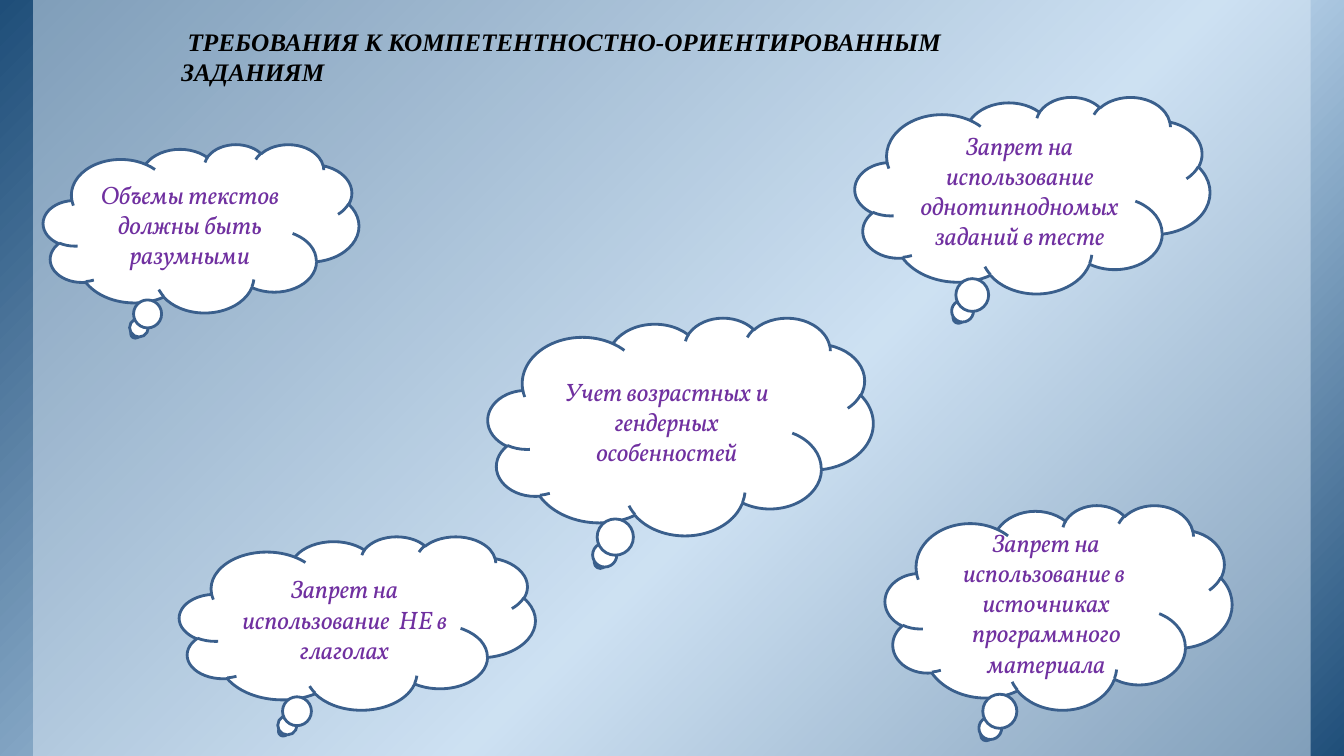
from lxml.etree import SubElement
from pptx import Presentation
from pptx.dml.color import RGBColor
from pptx.enum.shapes import MSO_SHAPE
from pptx.enum.text import MSO_ANCHOR, PP_ALIGN
from pptx.oxml.ns import qn
from pptx.util import Inches, Pt

COLORS = {
    "deep": "1F4E79",
    "sky": "BDD7EE",
    "veil": "DEEBF7",
    "cloud": "FFFFFF",
    "outline": "3A5F8C",
    "title": "000000",
    "requirement": "7030A0",
}
WIDTH, HEIGHT = 13.33, 7.5
TITLE = " ТРЕБОВАНИЯ К КОМПЕТЕНТНОСТНО-ОРИЕНТИРОВАННЫМ ЗАДАНИЯМ"
REQUIREMENTS = [
    ("Запрет на использование однотипнодномых заданий в тесте", (8.48, 0.96, 3.52, 1.95)),
    ("Запрет на использование  НЕ в глаголах", (1.78, 5.32, 3.53, 1.72)),
    ("Запрет на использование в  источниках программного материала", (8.78, 5.01, 3.44, 2.03)),
    ("Учет возрастных и гендерных особенностей", (4.84, 3.15, 3.82, 2.16)),
    ("Объемы текстов должны быть разумными", (0.43, 1.43, 3.13, 1.67)),
]


def rgb(name):
    return RGBColor.from_string(COLORS[name])


def add_filled(slide, preset, box, color):
    shape = slide.shapes.add_shape(preset, *map(Inches, box))
    shape.shadow.inherit = False
    shape.fill.solid()
    shape.fill.fore_color.rgb = rgb(color)
    shape.line.fill.background()
    return shape


def style_text(frame, text, font_name, color, bold=False):
    frame.word_wrap = True
    frame.text = text
    font = frame.paragraphs[0].runs[0].font
    font.name = font_name
    font.size = Pt(18)
    font.italic = True
    font.bold = bold
    font.color.rgb = rgb(color)


def add_backdrop(slide, box):
    left, top, width, height = box
    backdrop = add_filled(slide, MSO_SHAPE.RECTANGLE, box, "deep")
    backdrop.fill.gradient()
    backdrop.fill.gradient_angle = 315
    stops = backdrop.element.spPr.find(qn("a:gradFill")).find(qn("a:gsLst"))
    for stop in list(stops):
        stops.remove(stop)
    for percent, color in ((0, "deep"), (58, "sky"), (100, "deep")):
        stop = SubElement(stops, qn("a:gs"), pos=str(percent * 1000))
        SubElement(stop, qn("a:srgbClr"), val=COLORS[color])

    margin = 0.33
    veil_box = (left + margin, top, width - 2 * margin, height)
    veil = add_filled(slide, MSO_SHAPE.RECTANGLE, veil_box, "veil")
    veil_color = veil.element.spPr.find(qn("a:solidFill")).find(qn("a:srgbClr"))
    SubElement(veil_color, qn("a:alpha"), val="50000")


def add_title(slide, box):
    title = slide.shapes.add_textbox(*map(Inches, box))
    style_text(title.text_frame, TITLE, "Times New Roman", "title", bold=True)


def add_requirement(slide, box, text):
    cloud = add_filled(slide, MSO_SHAPE.CLOUD_CALLOUT, box, "cloud")
    cloud.line.color.rgb = rgb("outline")
    cloud.line.width = Pt(2)
    frame = cloud.text_frame
    style_text(frame, text, "Vollkorn", "requirement")
    frame.vertical_anchor = MSO_ANCHOR.MIDDLE
    frame.paragraphs[0].alignment = PP_ALIGN.CENTER


def main():
    deck = Presentation()
    deck.slide_width = Inches(WIDTH)
    deck.slide_height = Inches(HEIGHT)
    slide = deck.slides.add_slide(deck.slide_layouts[6])
    add_backdrop(slide, (0, 0, WIDTH, HEIGHT))
    add_title(slide, (1.7, 0.21, 8.29, 0.71))
    for text, box in REQUIREMENTS:
        add_requirement(slide, box, text)
    deck.save("out.pptx")


if __name__ == "__main__":
    main()
